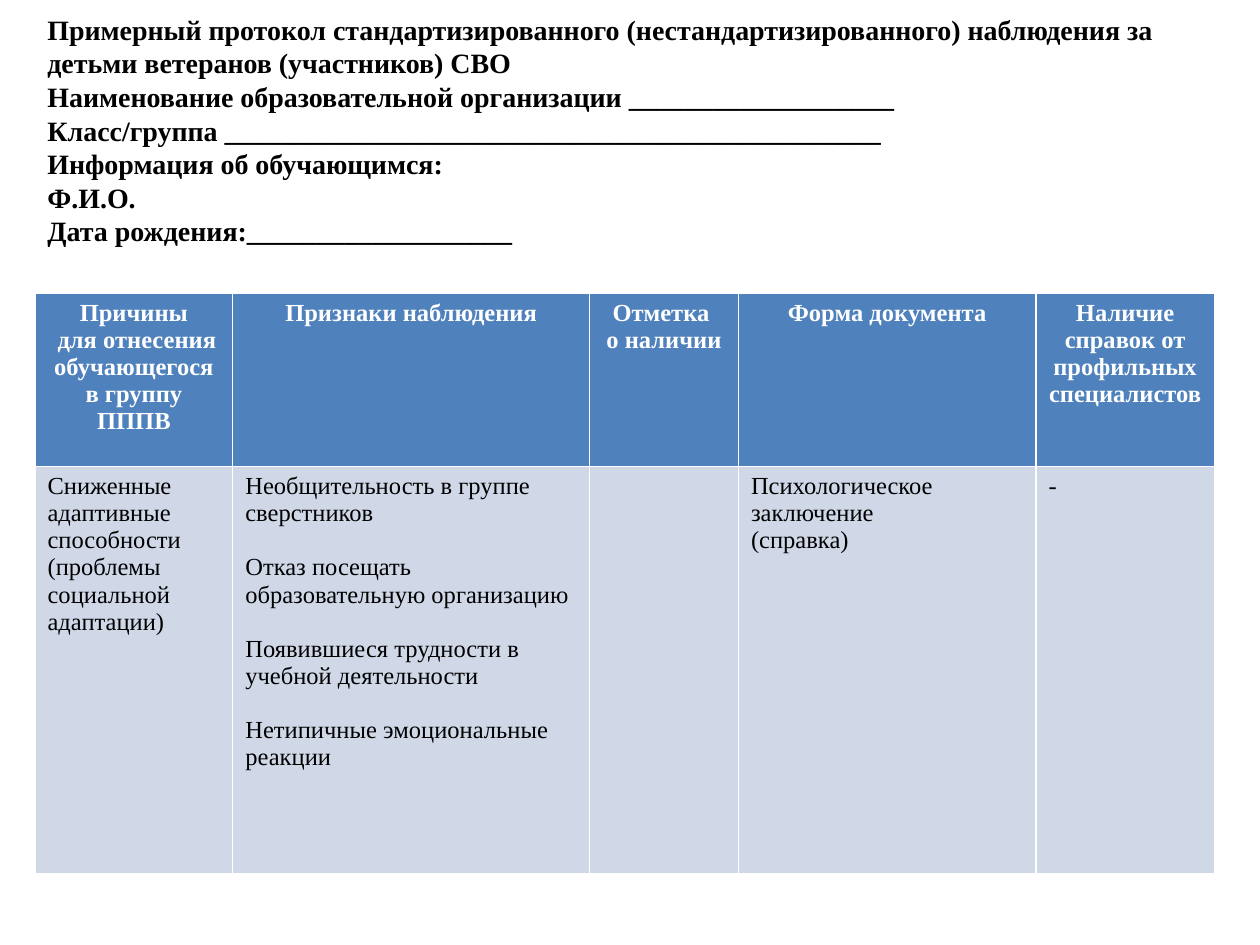
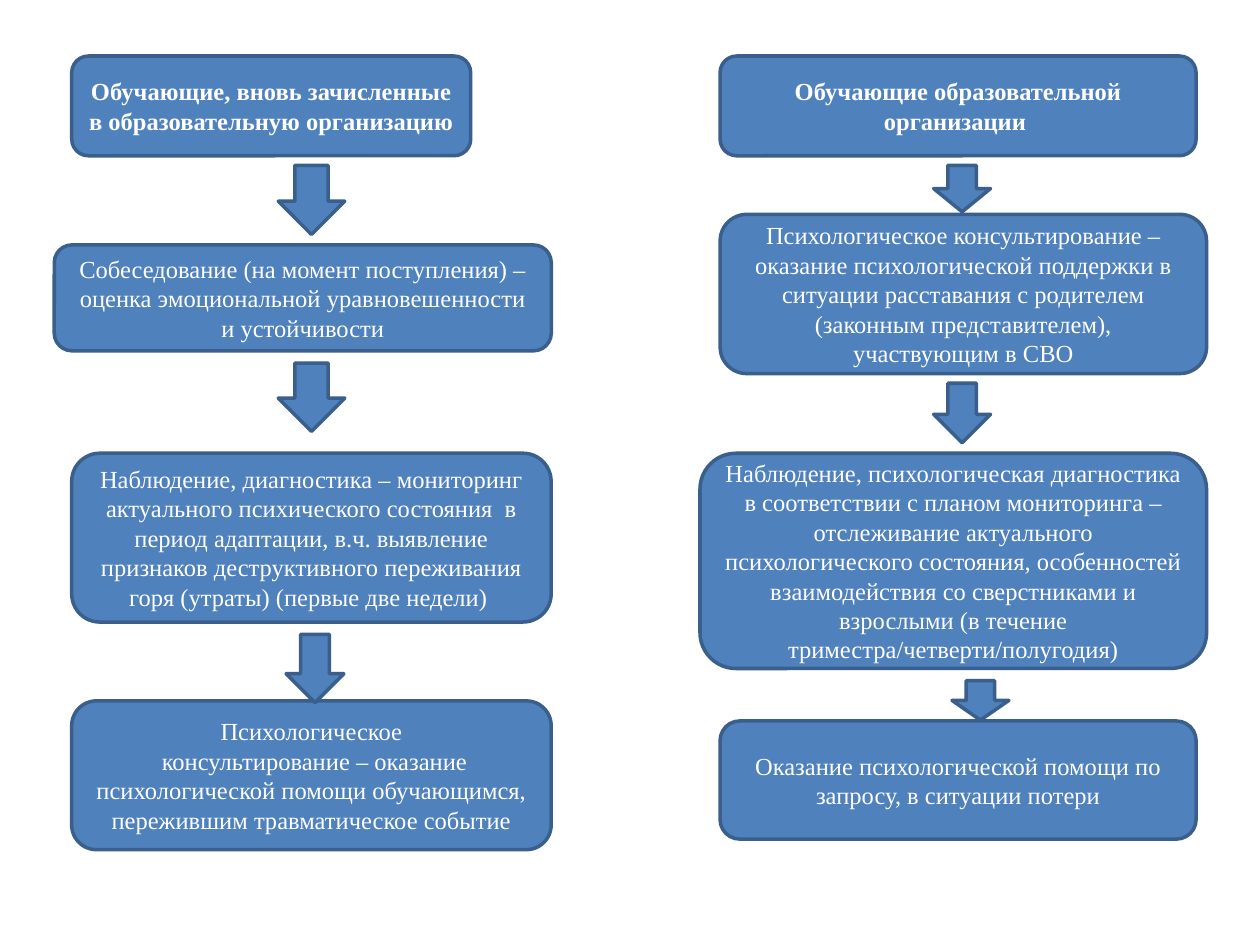
from pptx import Presentation
from pptx.dml.color import RGBColor
from pptx.enum.shapes import MSO_SHAPE as Preset
from pptx.enum.text import MSO_ANCHOR as Anchor, PP_ALIGN as Align
from pptx.util import Pt

# Shared style
FONT = "Times New Roman"
BLUE, OUTLINE, PALE = "4F81BD", "3A5F8C", "D0D8E8"
WHITE, BLACK = "FFFFFF", "000000"

# Protocol slide
HEADING = [
    "Примерный протокол стандартизированного (нестандартизированного) наблюдения за "
    "детьми ветеранов (участников) СВО",
    "Наименование образовательной организации " + "_" * 19,
    "Класс/группа " + "_" * 47,
    "Информация об обучающимся:",
    "Ф.И.О.",
    "Дата рождения:" + "_" * 19,
]
COLUMN_WIDTHS = [113, 204, 85, 170, 102]
ROW_HEIGHTS = [99, 233]
HEADER_CELLS = [
    ["Причины", " для отнесения обучающегося в группу ПППВ"],
    ["Признаки наблюдения"],
    ["Отметка ", "о наличии"],
    ["Форма документа"],
    ["Наличие справок от профильных специалистов"],
]
BODY_CELLS = [
    ["Сниженные адаптивные способности (проблемы социальной адаптации)"],
    ["Необщительность в группе сверстников",
     "Отказ посещать образовательную организацию",
     "Появившиеся трудности в учебной деятельности",
     "Нетипичные эмоциональные реакции"],
    [],
    ["Психологическое заключение", "(справка)"],
    ["-"],
]
SIGNS_COLUMN = 1

# Flow columns: each part is left, top, width, height within its column
NEWCOMER_STEPS = [
    ((10, 0, 228, 57), ["Обучающие, вновь зачисленные в образовательную организацию"]),
    ((0, 108, 284, 60.5), ["Собеседование (на момент поступления) – оценка эмоциональной "
                           "уравновешенности и устойчивости"]),
    ((10, 227, 274, 96.5), ["Наблюдение, диагностика – мониторинг актуального психического "
                            "состояния  в период адаптации, в.ч. выявление признаков "
                            "деструктивного переживания горя (утраты) (первые две недели) "]),
    ((10, 368.5, 274, 85), ["Психологическое",
                            " консультирование – оказание психологической помощи "
                            "обучающимся, пережившим травматическое событие"]),
]
NEWCOMER_ARROWS = [(128, 62.5, 38, 39.5), (128, 175.5, 38, 39), (132.5, 330.5, 33, 39)]
STUDENT_STEPS = [
    ((11.5, 0, 272, 57), ["Обучающие образовательной организации "]),
    ((11.5, 90.5, 278, 91), ["Психологическое консультирование – оказание психологической "
                             "поддержки в ситуации расставания с родителем (законным "
                             "представителем), участвующим в СВО"]),
    ((0, 227, 289.5, 123), ["Наблюдение, психологическая диагностика в соответствии с планом "
                            "мониторинга – отслеживание актуального психологического "
                            "состояния, особенностей взаимодействия со сверстниками и "
                            "взрослыми (в течение триместра/четверти/полугодия)"]),
    ((11.5, 380, 272, 67.5), ["Оказание психологической помощи по запросу, "
                              "в ситуации потери"]),
]
STUDENT_ARROWS = [(133.5, 62.5, 32.5, 26.5), (133.5, 187, 32.5, 34), (144, 357, 32.5, 22.5)]


def color(value):
    return RGBColor.from_string(value)


def write(frame, texts, size, ink, spacing, bold=False, align=Align.LEFT, gap=0):
    """Fill a text frame with one paragraph per text."""
    frame.word_wrap = True
    for index, text in enumerate(texts):
        paragraph = frame.add_paragraph() if index else frame.paragraphs[0]
        paragraph.alignment = align
        paragraph.line_spacing = Pt(spacing)
        paragraph.space_before = Pt(gap if index else 0)
        run = paragraph.add_run()
        run.text = text
        run.font.name = FONT
        run.font.size = Pt(size)
        run.font.bold = bold
        run.font.color.rgb = color(ink)


def add_heading(slide, left, top, width, height):
    text_box = slide.shapes.add_textbox(Pt(left), Pt(top), Pt(width), Pt(height))
    write(text_box.text_frame, HEADING, 16, BLACK, 19.2, bold=True)


def add_observation_table(slide, left, top):
    table = slide.shapes.add_table(
        len(ROW_HEIGHTS), len(COLUMN_WIDTHS), Pt(left), Pt(top),
        Pt(sum(COLUMN_WIDTHS)), Pt(sum(ROW_HEIGHTS))).table
    for column, width in zip(table.columns, COLUMN_WIDTHS):
        column.width = Pt(width)
    for row, height in zip(table.rows, ROW_HEIGHTS):
        row.height = Pt(height)

    for index, (header, body) in enumerate(zip(HEADER_CELLS, BODY_CELLS)):
        header_cell, body_cell = table.cell(0, index), table.cell(1, index)
        for cell, fill in ((header_cell, BLUE), (body_cell, PALE)):
            cell.fill.solid()
            cell.fill.fore_color.rgb = color(fill)
        write(header_cell.text_frame, header, 14, WHITE, 15.5, bold=True, align=Align.CENTER)
        gap = 15.5 if index == SIGNS_COLUMN else 0
        write(body_cell.text_frame, body, 14, BLACK, 15.5, gap=gap)


def add_block(slide, preset, left, top, width, height):
    shape = slide.shapes.add_shape(preset, Pt(left), Pt(top), Pt(width), Pt(height))
    shape.shadow.inherit = False
    shape.fill.solid()
    shape.fill.fore_color.rgb = color(BLUE)
    shape.line.color.rgb = color(OUTLINE)
    shape.line.width = Pt(2)
    return shape


def add_flow_column(slide, left, top, steps, arrows):
    # Steps, the first one being the bold heading
    for index, ((x, y, width, height), texts) in enumerate(steps):
        shape = add_block(slide, Preset.ROUNDED_RECTANGLE, left + x, top + y, width, height)
        shape.text_frame.vertical_anchor = Anchor.MIDDLE
        write(shape.text_frame, texts, 14, WHITE, 16.8, bold=index == 0, align=Align.CENTER)
    # Arrows between steps
    for x, y, width, height in arrows:
        add_block(slide, Preset.DOWN_ARROW, left + x, top + y, width, height)


def main():
    presentation = Presentation()
    presentation.slide_width, presentation.slide_height = Pt(720), Pt(540)
    blank = presentation.slide_layouts[6]

    protocol = presentation.slides.add_slide(blank)
    add_heading(protocol, 20, 3.5, 663, 148)
    add_observation_table(protocol, 20, 167.5)

    flow = presentation.slides.add_slide(blank)
    add_flow_column(flow, 31, 32, NEWCOMER_STEPS, NEWCOMER_ARROWS)
    add_flow_column(flow, 400, 32, STUDENT_STEPS, STUDENT_ARROWS)

    presentation.save("out.pptx")


if __name__ == "__main__":
    main()
